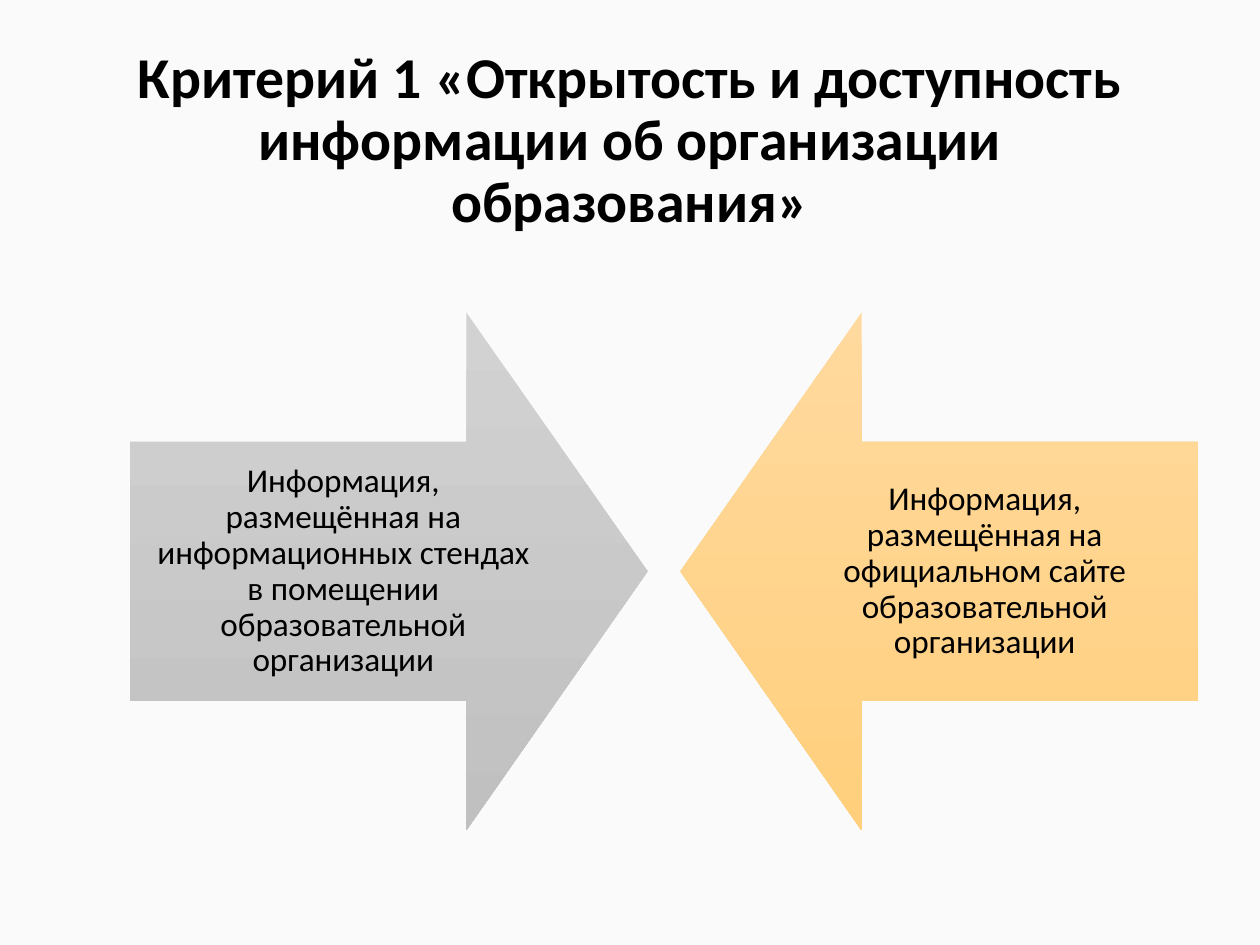
from pptx import Presentation
from pptx.dml.color import RGBColor
from pptx.enum import shapes, text
from pptx.util import Inches, Pt

HEADING = "Критерий 1 «Открытость и доступность информации об организации образования»"
SOURCES = [
    {
        "label": "Информация, размещённая на информационных стендах в помещении образовательной организации",
        "arrow": shapes.MSO_SHAPE.RIGHT_ARROW,
        "gradient": ("stand_light", "stand_dark"),
        "left": 1.03,
        "label_shift": 0,
    },
    {
        "label": "Информация, размещённая на официальном сайте образовательной организации",
        "arrow": shapes.MSO_SHAPE.LEFT_ARROW,
        "gradient": ("site_light", "site_dark"),
        "left": 5.4,
        "label_shift": 0.72,
    },
]
COLORS = {
    "background": "FAFAFA",
    "text": "000000",
    "stand_light": "D2D2D2",
    "stand_dark": "C0C0C0",
    "site_light": "FFD99E",
    "site_dark": "FFCF7C",
}
ARROW_TOP, ARROW_SIZE = 2.48, 4.11
SHAFT, HEAD = 0.5, 0.35
LABEL_WIDTH = 3.39
LABEL_INSET = Inches(0.15)


def color(name):
    return RGBColor.from_string(COLORS[name])


def write(frame, wording, size, bold=False):
    frame.word_wrap = True
    frame.auto_size = text.MSO_AUTO_SIZE.NONE
    frame.vertical_anchor = text.MSO_ANCHOR.MIDDLE
    frame.text = wording
    paragraph = frame.paragraphs[0]
    paragraph.alignment = text.PP_ALIGN.CENTER
    paragraph.line_spacing = 0.9
    paragraph.font.name = "Calibri"
    paragraph.font.size = Pt(size)
    paragraph.font.bold = bold
    paragraph.font.color.rgb = color("text")


def add_source(slide, source):
    arrow = slide.shapes.add_shape(
        source["arrow"], Inches(source["left"]), Inches(ARROW_TOP),
        Inches(ARROW_SIZE), Inches(ARROW_SIZE))
    arrow.adjustments[0], arrow.adjustments[1] = SHAFT, HEAD
    arrow.shadow.inherit = False
    arrow.line.fill.background()
    arrow.fill.gradient()
    arrow.fill.gradient_angle = 270
    for position, (stop, name) in enumerate(zip(arrow.fill.gradient_stops, source["gradient"])):
        stop.position = position
        stop.color.rgb = color(name)

    shaft_height = ARROW_SIZE * SHAFT
    label = slide.shapes.add_textbox(
        Inches(source["left"] + source["label_shift"]),
        Inches(ARROW_TOP + (ARROW_SIZE - shaft_height) / 2),
        Inches(LABEL_WIDTH), Inches(shaft_height)).text_frame
    label.margin_left = label.margin_right = LABEL_INSET
    label.margin_top = label.margin_bottom = LABEL_INSET
    write(label, source["label"], 19)


def main():
    deck = Presentation()
    deck.slide_width, deck.slide_height = Inches(10), Inches(7.5)
    slide = deck.slides.add_slide(deck.slide_layouts[5])
    slide.background.fill.solid()
    slide.background.fill.fore_color.rgb = color("background")

    heading = slide.shapes.title
    heading.left, heading.top = Inches(0.69), Inches(0.4)
    heading.width, heading.height = Inches(8.62), Inches(1.45)
    write(heading.text_frame, HEADING, 33, bold=True)

    for source in SOURCES:
        add_source(slide, source)
    deck.save("out.pptx")


if __name__ == "__main__":
    main()
